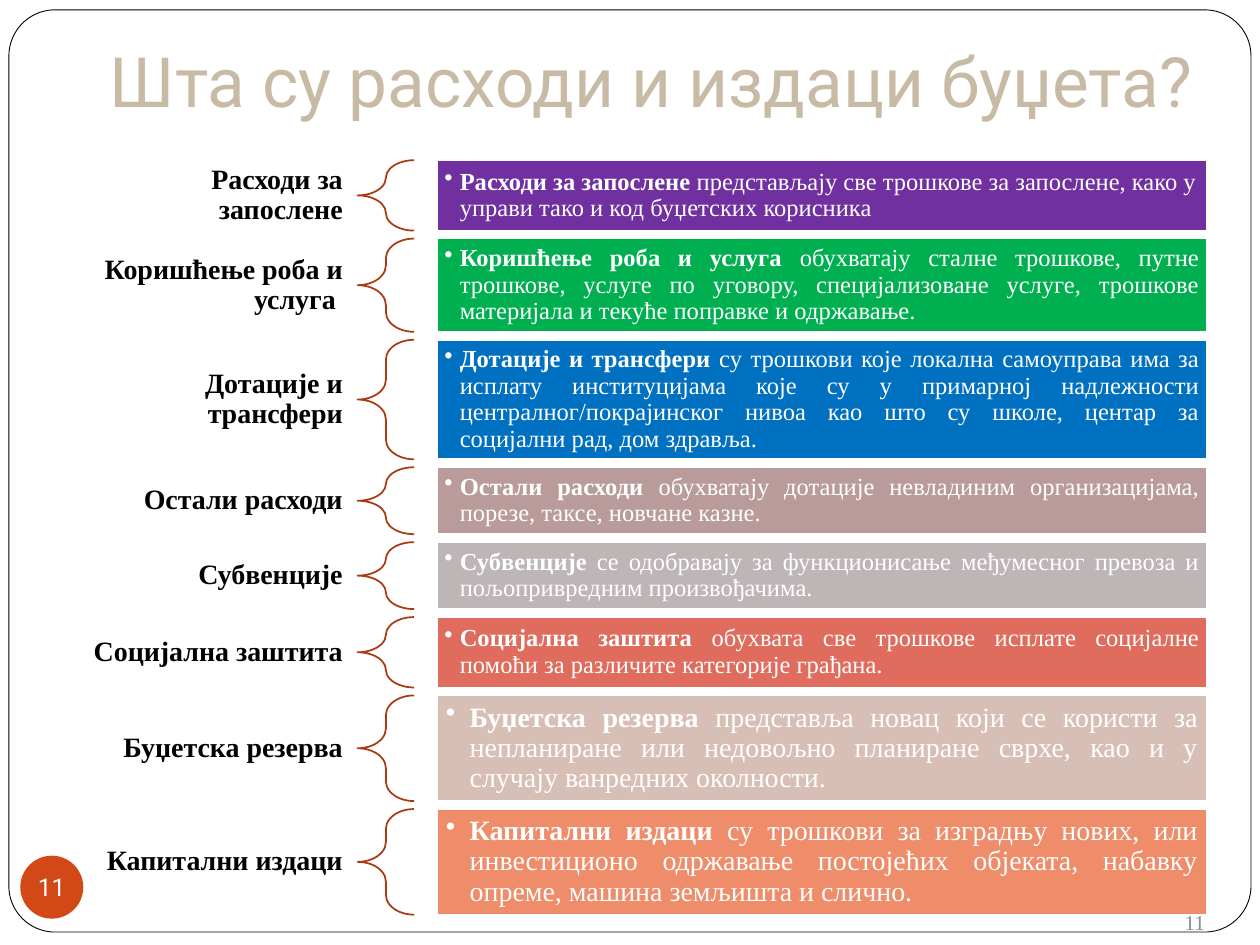
import dataclasses

import lxml.etree
import pptx
import pptx.dml.color
import pptx.enum.shapes
import pptx.enum.text
import pptx.oxml.ns
import pptx.util

Cm = pptx.util.Cm
Pt = pptx.util.Pt
Shape = pptx.enum.shapes.MSO_SHAPE
Align = pptx.enum.text.PP_ALIGN


@dataclasses.dataclass(frozen=True)
class Theme:
    heading_font: str = "Roboto"
    body_font: str = "Times New Roman"
    title_size: float = 39.6
    label_size: float = 16
    number_size: float = 14
    footer_size: float = 12
    white: str = "FFFFFF"
    black: str = "000000"
    title: str = "C7BBA6"
    badge: str = "D34817"
    brace: str = "A93A12"
    footer: str = "8C8C8C"
    purple: str = "7030A0"
    green: str = "00B050"
    blue: str = "0070C0"
    mauve: str = "B99B9B"
    grey: str = "BDB5B6"
    red: str = "DF6C5D"
    beige: str = "D8BFB6"
    orange: str = "EF8C6A"


@dataclasses.dataclass(frozen=True)
class Expense:
    label: str
    term: str
    description: str
    color: str
    height: float
    label_height: float
    size: float = 14
    inset: float = 0.15
    indent: float = 0.31
    alignment: Align = Align.JUSTIFY


class SlideBuilder:
    def __init__(self, slide, theme):
        self.slide = slide
        self.theme = theme

    def color(self, value):
        return pptx.dml.color.RGBColor.from_string(value)

    def shape(self, kind, left, top, width, height, fill=None, line=None, line_width=1):
        shape = self.slide.shapes.add_shape(kind, Cm(left), Cm(top), Cm(width), Cm(height))
        shape.shadow.inherit = False
        if fill:
            shape.fill.solid()
            shape.fill.fore_color.rgb = self.color(fill)
        else:
            shape.fill.background()
        if line:
            shape.line.color.rgb = self.color(line)
            shape.line.width = Pt(line_width)
        else:
            shape.line.fill.background()
        return shape

    def add_runs(self, shape, runs, font, size, color, alignment, insets=(0.25, 0.13), wrap=True):
        frame = shape.text_frame
        frame.word_wrap = wrap
        frame.vertical_anchor = pptx.enum.text.MSO_ANCHOR.MIDDLE
        frame.margin_left = frame.margin_right = Cm(insets[0])
        frame.margin_top = frame.margin_bottom = Cm(insets[1])
        paragraph = frame.paragraphs[0]
        paragraph.alignment = alignment
        for text, bold in runs:
            run = paragraph.add_run()
            run.text = text
            run.font.name = font
            run.font.size = Pt(size)
            run.font.bold = bold
            run.font.color.rgb = self.color(color)
        return paragraph

    def text(self, left, top, width, height, *content, **options):
        box = self.slide.shapes.add_textbox(Cm(left), Cm(top), Cm(width), Cm(height))
        return self.add_runs(box, *content, **options)

    def frame(self):
        shape = self.shape(Shape.ROUNDED_RECTANGLE, 0.18, 0.2, 25.04, 18.59,
                           self.theme.white, self.theme.black, 0.5)
        shape.adjustments[0] = 0.05

    def badge(self, number):
        shape = self.shape(Shape.OVAL, 0.41, 17.25, 1.27, 1.27, self.theme.badge)
        self.add_runs(shape, [(number, False)], self.theme.heading_font,
                      self.theme.number_size, self.theme.white, Align.CENTER,
                      insets=(0, 0), wrap=False)

    def title(self, text):
        self.text(1.7, 0.74, 22.86, 1.73, [(text, False)], self.theme.heading_font,
                  self.theme.title_size, self.theme.title, Align.CENTER)

    def footer(self, number):
        self.text(18.62, 18.08, 5.92, 1.02, [(number, False)], self.theme.body_font,
                  self.theme.footer_size, self.theme.footer, Align.RIGHT)

    def label(self, expense, top):
        label_top = top + (expense.height - expense.label_height) / 2
        paragraph = self.text(1.5, label_top, 5.71, expense.label_height,
                              [(expense.label, True)], self.theme.body_font,
                              self.theme.label_size, self.theme.black, Align.RIGHT,
                              insets=(0.3, 0.1))
        paragraph.line_spacing = 0.9

    def brace(self, top, height):
        shape = self.shape(Shape.LEFT_BRACE, 7.21, top, 1.14, height, line=self.theme.brace)
        shape.adjustments[0] = 0.35
        shape.adjustments[1] = 0.5

    def bar(self, expense, top):
        shape = self.shape(Shape.RECTANGLE, 8.81, top, 15.52, expense.height,
                           expense.color, self.theme.white)
        runs = [(expense.term, True), (expense.description, False)]
        paragraph = self.add_runs(shape, runs, self.theme.body_font, expense.size,
                                  self.theme.white, expense.alignment,
                                  insets=(expense.inset, expense.inset))
        paragraph.level = 1
        paragraph.line_spacing = 0.9
        properties = paragraph._p.get_or_add_pPr()
        properties.set("marL", str(Cm(expense.indent)))
        properties.set("indent", str(-Cm(expense.indent)))
        bullet = lxml.etree.SubElement(properties, pptx.oxml.ns.qn("a:buChar"))
        bullet.set("char", "•")

    def expense_rows(self, expenses, top, gap):
        for expense in expenses:
            self.label(expense, top)
            self.brace(top, expense.height)
            self.bar(expense, top)
            top += expense.height + gap


def main():
    theme = Theme()
    large = dict(size=16, inset=0.18, indent=0.48)
    expenses = [
        Expense("Расходи за запослене", "Расходи за запослене ",
                "представљају све трошкове за запослене, како у управи тако и код "
                "буџетских корисника", theme.purple, 1.42, 1.42, alignment=Align.LEFT),
        Expense("Коришћење роба и услуга ", "Коришћење роба и услуга ",
                "обухватају сталне трошкове, путне трошкове, услуге по уговору, "
                "специјализоване услуге, трошкове материјала и текуће поправке и "
                "одржавање.", theme.green, 1.88, 1.42),
        Expense("Дотације и трансфери", "Дотације и трансфери ",
                "су трошкови које локална самоуправа има за исплату институцијама које су "
                "у примарној надлежности централног/покрајинског нивоа као што су школе, "
                "центар за социјални рад, дом здравља. ", theme.blue, 2.41, 1.42),
        Expense("Остали расходи", "Остали расходи ",
                "обухватају дотације невладиним организацијама, порезе, таксе, новчане "
                "казне.", theme.mauve, 1.35, 0.89),
        Expense("Субвенције", "Субвенције",
                " сe одобравају за функционисање међумесног превоза и "
                "пољопривредним произвођачима. ", theme.grey, 1.35, 0.89),
        Expense("Социјална заштита", "Социјална заштита ",
                "обухвата све трошкове исплате социјалне помоћи за различите категорије "
                "грађана.", theme.red, 1.42, 1.42),
        Expense("Буџетска резерва", "Буџетска резерва ",
                "представља новац који се користи за непланиране или недовољно планиране "
                "сврхе, као и у случају ванредних околности.",
                theme.beige, 2.13, 0.89, **large),
        Expense("Капитални издаци", "Капитални издаци ",
                "су трошкови за изградњу нових, или инвестиционо одржавање постојећих "
                "објеката, набавку опреме, машина земљишта и слично.",
                theme.orange, 2.13, 1.42, **large),
    ]

    presentation = pptx.Presentation()
    presentation.slide_width = Cm(25.4)
    presentation.slide_height = Cm(19.05)
    slide = presentation.slides.add_slide(presentation.slide_layouts[6])

    builder = SlideBuilder(slide, theme)
    builder.frame()
    builder.badge("11")
    builder.title("Шта су расходи и издаци буџета?")
    builder.expense_rows(expenses, top=3.23, gap=0.16)
    builder.footer("11")
    presentation.save("out.pptx")


if __name__ == "__main__":
    main()
